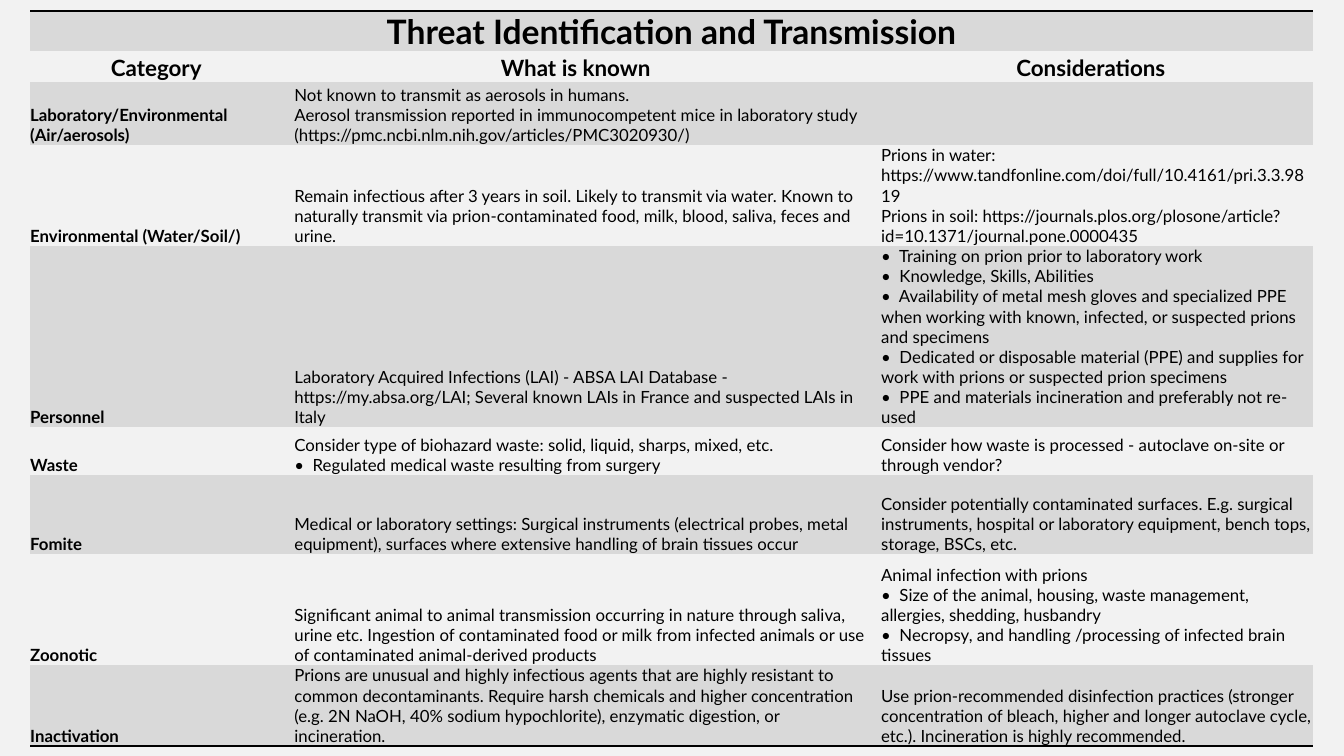
from lxml import etree
from pptx import Presentation
from pptx.dml.color import RGBColor
from pptx.enum.text import MSO_ANCHOR, PP_ALIGN
from pptx.oxml.ns import qn
from pptx.util import Inches, Pt

BOTTOM = MSO_ANCHOR.BOTTOM
CENTER, LEFT = PP_ALIGN.CENTER, PP_ALIGN.LEFT
COLORS = {"page": "F2F2F2", "band": "D9D9D9", "ink": "000000"}
FONT = "Lato"
PLAIN_TABLE_STYLE = "{2D5ABB26-0587-4C30-8999-92F81FD0307C}"

COLUMN_WIDTHS = [2.5, 5.82, 4.4]
ROW_HEIGHTS = [0.26, 0.3, 0.63, 0.95, 1.1, 0.47, 0.79, 1.1, 0.64]
# "\v" is a line break, "\n" starts a new paragraph
ROWS = [
    ["Threat Identification and Transmission", "", ""],
    ["Category", "What is known", "Considerations"],
    ["Laboratory/Environmental (Air/aerosols)",
     "Not known to transmit as aerosols in humans.\v"
     "Aerosol transmission reported in immunocompetent mice in laboratory study "
     "(https://pmc.ncbi.nlm.nih.gov/articles/PMC3020930/)",
     ""],
    ["Environmental (Water/Soil/)",
     "Remain infectious after 3 years in soil. Likely to transmit via water. Known to "
     "naturally transmit via prion-contaminated food, milk, blood, saliva, feces and urine.",
     "Prions in water: https://www.tandfonline.com/doi/full/10.4161/pri.3.3.9819\v"
     "Prions in soil: https://journals.plos.org/plosone/article?id=10.1371/journal.pone.0000435"],
    ["Personnel",
     "Laboratory Acquired Infections (LAI) - ABSA LAI Database - https://my.absa.org/LAI; "
     "Several known LAIs in France and suspected LAIs in Italy",
     "•  Training on prion prior to laboratory work\v"
     "•  Knowledge, Skills, Abilities\v"
     "•  Availability of metal mesh gloves and specialized PPE when working with known, "
     "infected, or suspected prions and specimens\n"
     "•  Dedicated or disposable material (PPE) and supplies for work with prions or "
     "suspected prion specimens\n"
     "•  PPE and materials incineration and preferably not re-used"],
    ["Waste",
     "Consider type of biohazard waste: solid, liquid, sharps, mixed, etc.\v"
     "•  Regulated medical waste resulting from surgery",
     "Consider how waste is processed - autoclave on-site or through vendor?"],
    ["Fomite",
     "Medical or laboratory settings: Surgical instruments (electrical probes, metal "
     "equipment), surfaces where extensive handling of brain tissues occur",
     "Consider potentially contaminated surfaces. E.g. surgical instruments, hospital or "
     "laboratory equipment, bench tops, storage, BSCs, etc."],
    ["Zoonotic",
     "Significant animal to animal transmission occurring in nature through saliva, urine "
     "etc. Ingestion of contaminated food or milk from infected animals or use of "
     "contaminated animal-derived products",
     "Animal infection with prions\v"
     "•  Size of the animal, housing, waste management, allergies, shedding, husbandry\v"
     "•  Necropsy, and handling /processing of infected brain tissues"],
    ["Inactivation",
     "Prions are unusual and highly infectious agents that are highly resistant to common "
     "decontaminants. Require harsh chemicals and higher concentration (e.g. 2N NaOH, 40% "
     "sodium hypochlorite), enzymatic digestion, or incineration.",
     "Use prion-recommended disinfection practices (stronger concentration of bleach, "
     "higher and longer autoclave cycle, etc.). Incineration is highly recommended."],
]


def add_border(cell, side):
    """Draw a thin line on one side of a cell: 'a:lnT' or 'a:lnB'."""
    properties = cell._tc.get_or_add_tcPr()
    line = etree.Element(qn(side), w=str(Pt(1)))
    fill = etree.SubElement(line, qn("a:solidFill"))
    etree.SubElement(fill, qn("a:srgbClr"), val=COLORS["ink"])
    properties.insert(0, line)


deck = Presentation()
deck.slide_width, deck.slide_height = Inches(13.33), Inches(7.5)
page = deck.slides.add_slide(deck.slide_layouts[6])
page.background.fill.solid()
page.background.fill.fore_color.rgb = RGBColor.from_string(COLORS["page"])

frame = page.shapes.add_table(len(ROWS), len(COLUMN_WIDTHS), Inches(0.3), Inches(0.11),
                              Inches(sum(COLUMN_WIDTHS)), Inches(sum(ROW_HEIGHTS)))
table = frame.table
table.first_row = table.horz_banding = False
table._tbl.tblPr.find(qn("a:tableStyleId")).text = PLAIN_TABLE_STYLE
for column, width in zip(table.columns, COLUMN_WIDTHS):
    column.width = Inches(width)
for row, height in zip(table.rows, ROW_HEIGHTS):
    row.height = Inches(height)

last_row = len(ROWS) - 1
for r, texts in enumerate(ROWS):
    size = {0: 24, 1: 16}.get(r, 12)
    for c, text in enumerate(texts):
        cell = table.cell(r, c)
        cell.text = text
        cell.vertical_anchor = BOTTOM
        cell.margin_left = cell.margin_right = cell.margin_top = cell.margin_bottom = 0
        if r % 2 == 0:
            cell.fill.solid()
            cell.fill.fore_color.rgb = RGBColor.from_string(COLORS["band"])
        else:
            cell.fill.background()
        if r == 0:
            add_border(cell, "a:lnT")
        if r == last_row:
            add_border(cell, "a:lnB")
        for para in cell.text_frame.paragraphs:
            para.alignment = CENTER if r < 2 else LEFT
            if r >= 2 and c > 0:
                para._p.get_or_add_pPr().set("marL", str(Inches(0.12)))
            para.font.name = FONT
            para.font.size = Pt(size)
            para.font.bold = r < 2 or c == 0
            para.font.color.rgb = RGBColor.from_string(COLORS["ink"])
table.cell(0, 0).merge(table.cell(0, 2))

deck.save("out.pptx")
